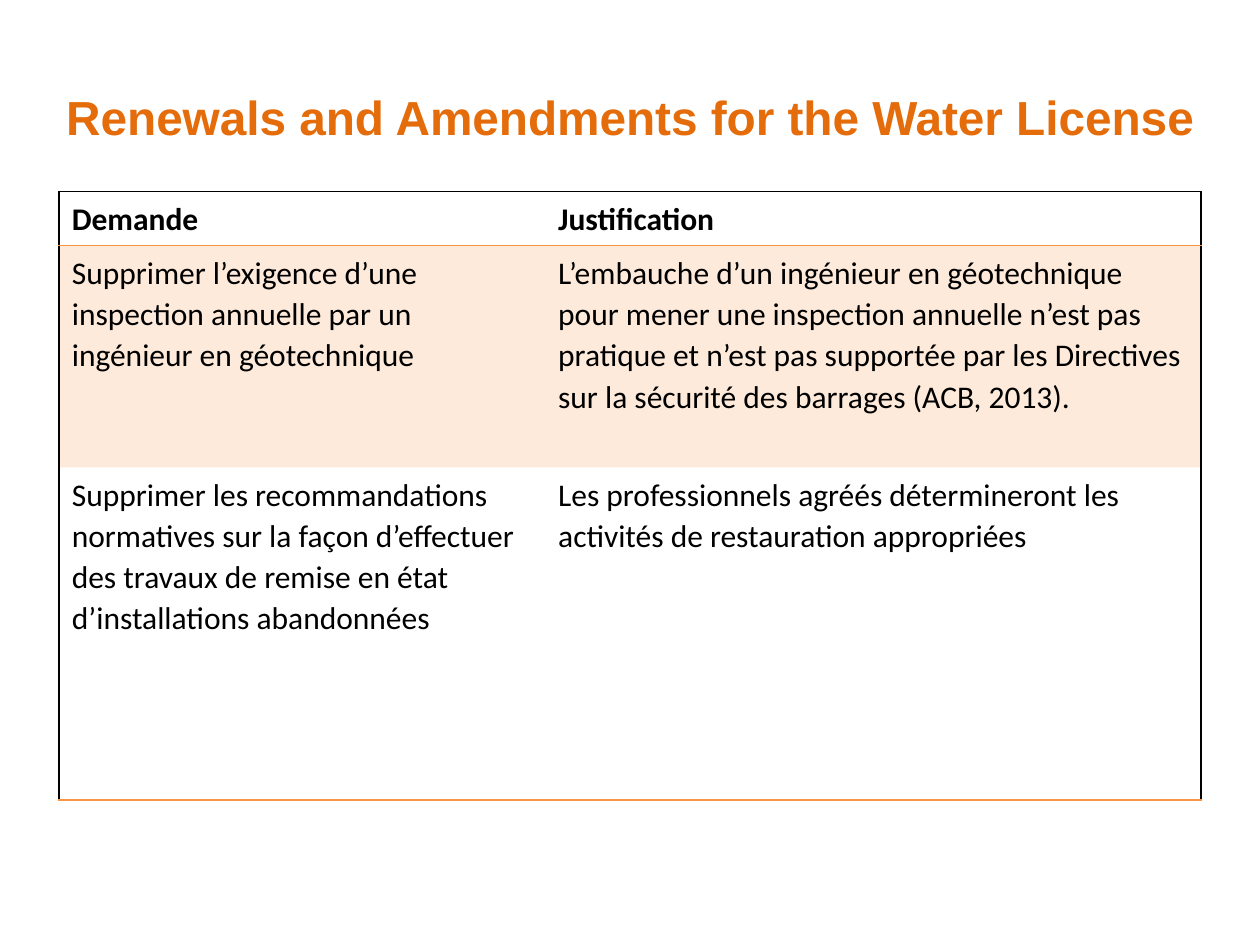
from lxml import etree
from pptx import Presentation
from pptx import util as u
from pptx.dml.color import RGBColor
from pptx.enum import text
from pptx.oxml import ns

WIDTH, HEIGHT = 10, 7.5
COLORS = {"title": "E46C0A", "accent": "F79646", "ink": "000000"}
TINT = 20
COLUMNS = [3.86, 5.2]
ROWS = [0.43, 1.76, 2.64]
REQUESTS = [
    ("Demande", "Justification"),
    (
        "Supprimer l’exigence d’une inspection annuelle par un ingénieur en géotechnique",
        "L’embauche d’un ingénieur en géotechnique pour mener une inspection annuelle "
        "n’est pas pratique et n’est pas supportée par les Directives sur la sécurité "
        "des barrages (ACB, 2013).",
    ),
    (
        "Supprimer les recommandations normatives sur la façon d’effectuer des travaux "
        "de remise en état d’installations abandonnées",
        "Les professionnels agréés détermineront les activités de restauration appropriées",
    ),
]


def write(frame, words, *, size, font, color="ink", bold=False,
          align=text.PP_ALIGN.LEFT, spacing=1.0, after=0):
    frame.word_wrap = True
    para = frame.paragraphs[0]
    para.alignment = align
    para.line_spacing = spacing
    para.space_after = u.Pt(after)
    span = para.add_run()
    span.text = words
    span.font.size = u.Pt(size)
    span.font.name = font
    span.font.bold = bold
    span.font.color.rgb = RGBColor.from_string(COLORS[color])


def add_node(parent, tag, **attributes):
    return etree.SubElement(parent, ns.qn(tag), attributes)


def set_borders(cell, edges):
    properties = cell._tc.get_or_add_tcPr()
    for side in "LRTB":
        line = add_node(properties, f"a:ln{side}", w=str(u.Pt(1)))
        if side in edges:
            fill = add_node(line, "a:solidFill")
            add_node(fill, "a:srgbClr", val=COLORS[edges[side]])
        else:
            add_node(line, "a:noFill")


def set_tint(cell, color, percent):
    cell.fill.solid()
    cell.fill.fore_color.rgb = RGBColor.from_string(COLORS[color])
    shade = cell._tc.tcPr.find(".//" + ns.qn("a:solidFill") + "[last()]")
    shade = cell._tc.tcPr.findall(ns.qn("a:solidFill"))[-1][0]
    add_node(shade, "a:alpha", val=str(percent * 1000))


def add_title(page, left, top, width, height):
    box = page.shapes.add_textbox(*map(u.Inches, (left, top, width, height)))
    box.text_frame.vertical_anchor = text.MSO_ANCHOR.MIDDLE
    write(box.text_frame, "Renewals and Amendments for the Water License",
          size=27.3, font="Arial", color="title", bold=True,
          align=text.PP_ALIGN.CENTER)


def add_requests(page, left, top, width, height):
    box = page.shapes.add_table(len(ROWS), len(COLUMNS),
                                *map(u.Inches, (left, top, width, height)))
    table = box.table
    table.first_row = table.horz_banding = False
    for column, share in zip(table.columns, COLUMNS):
        column.width = u.Inches(width * share / sum(COLUMNS))
    for row, share in zip(table.rows, ROWS):
        row.height = u.Inches(height * share / sum(ROWS))
    last = len(ROWS) - 1
    for r, request in enumerate(REQUESTS):
        for c, words in enumerate(request):
            cell = table.cell(r, c)
            edges = {"R" if c else "L": "ink"}
            if r == 0:
                edges["T"] = "ink"
            if r in (0, last):
                edges["B"] = "accent"
            if r == 1:
                edges["T"] = "accent"
            set_borders(cell, edges)
            if r == 1:
                set_tint(cell, "accent", TINT)
            else:
                cell.fill.background()
            write(cell.text_frame, words, size=18, font="Calibri",
                  bold=r == 0, spacing=1.07, after=8)


def main():
    deck = Presentation()
    deck.slide_width, deck.slide_height = u.Inches(WIDTH), u.Inches(HEIGHT)
    page = deck.slides.add_slide(deck.slide_layouts[6])
    add_title(page, 0, 0.04 * HEIGHT, WIDTH, HEIGHT / 6)
    add_requests(page, 0.47, 1.52, sum(COLUMNS), sum(ROWS))
    deck.save("out.pptx")


if __name__ == "__main__":
    main()
